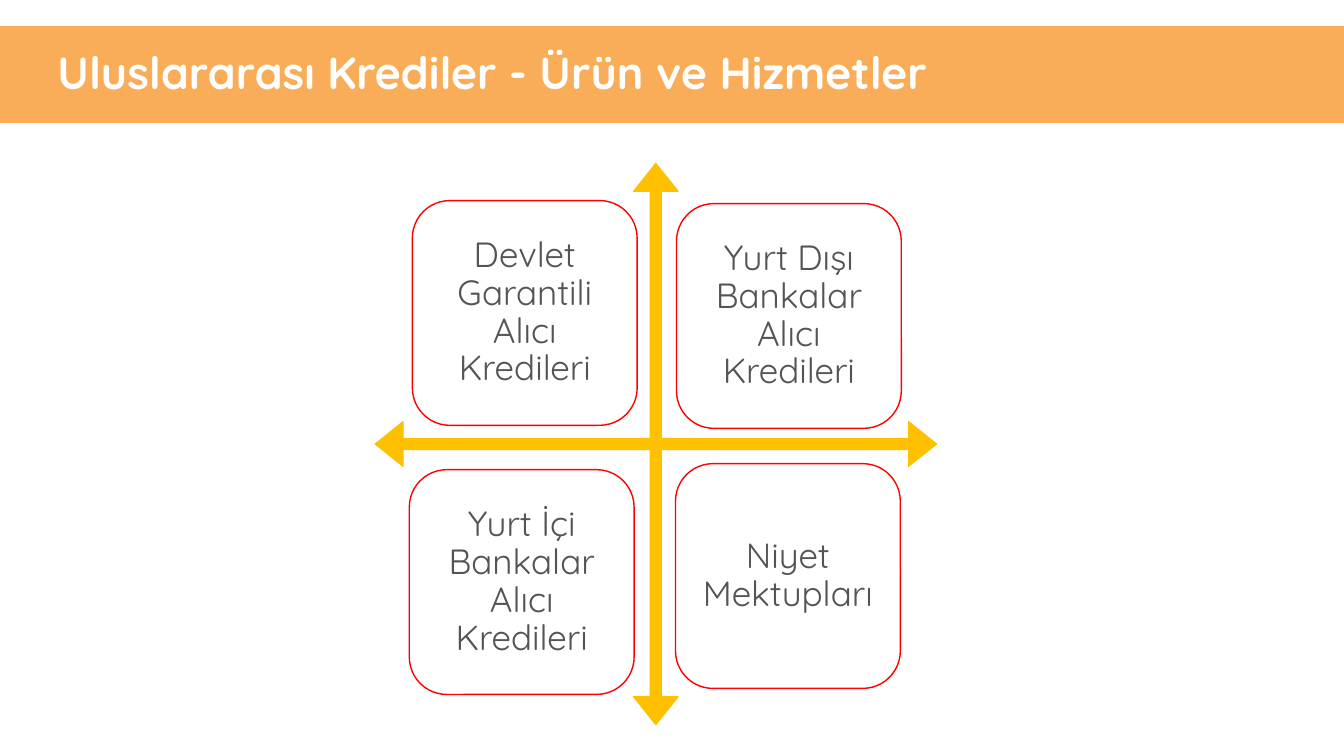
from pptx import Presentation
from pptx.dml.color import RGBColor
from pptx.enum import shapes, text
from pptx.oxml import xmlchemy as xc
from pptx.util import Inches, Pt

# Content
TITLE = "Uluslararası Krediler - Ürün ve Hizmetler"
CARDS = [  # label, left, top
    ("Devlet Garantili Alıcı Kredileri", 4.09, 1.99),
    ("Yurt İçi Bankalar Alıcı Kredileri", 4.06, 4.66),
    ("Yurt Dışı Bankalar Alıcı Kredileri", 6.71, 2.02),
    ("Niyet Mektupları", 6.7, 4.6),
]
SIDE = 2.23
CROSS = (3.72, 1.62, 5.57, 5.57)
BAND = (0, 0.26, 13.33, 0.96)

FONT = "Quicksand"
ORANGE = RGBColor(0xF9, 0x86, 0x07)
GOLD = RGBColor(0xFF, 0xC0, 0x00)
RED = RGBColor(0xFF, 0x00, 0x00)
WHITE = RGBColor(0xFF, 0xFF, 0xFF)
GREY = RGBColor(0x54, 0x54, 0x54)


def write(shape, words, size, color, align, bold=False, inset=0.1):
    frame = shape.text_frame
    frame.word_wrap = True
    frame.auto_size = text.MSO_AUTO_SIZE.NONE
    frame.vertical_anchor = text.MSO_ANCHOR.MIDDLE
    frame.margin_left = Inches(inset)
    frame.margin_right = frame.margin_top = frame.margin_bottom = Inches(0.1)
    para = frame.paragraphs[0]
    para.alignment, para.line_spacing = align, 0.9
    run = para.add_run()
    run.text = words
    font = run.font
    font.name, font.size, font.bold = FONT, Pt(size), bold
    font.color.rgb = color


def draw(slide, kind, box, fill, line, width):
    shape = slide.shapes.add_shape(kind, *map(Inches, box))
    shape.shadow.inherit = False
    shape.fill.solid()
    shape.fill.fore_color.rgb = fill
    shape.line.color.rgb = line
    shape.line.width = Pt(width)
    return shape


def main():
    deck = Presentation()
    deck.slide_width, deck.slide_height = Inches(13.33), Inches(7.5)
    slide = deck.slides.add_slide(deck.slide_layouts[5])

    # Title band, 67 % opaque
    band = slide.shapes.title
    band.left, band.top, band.width, band.height = map(Inches, BAND)
    band.fill.solid()
    band.fill.fore_color.rgb = ORANGE
    tint = band.fill._xPr.find(".//" + xc.qn("a:srgbClr"))
    alpha = xc.OxmlElement("a:alpha")
    alpha.set("val", "67000")
    tint.append(alpha)
    write(band, TITLE, 32, WHITE, text.PP_ALIGN.LEFT, bold=True, inset=0.57)

    # Four-way arrow
    kind = shapes.MSO_SHAPE
    cross = draw(slide, kind.QUAD_ARROW, CROSS, GOLD, GOLD, 0.75)
    for i, part in enumerate((0.02, 0.04, 0.05)):
        cross.adjustments[i] = part

    # Product cards
    for label, left, top in CARDS:
        card = draw(slide, kind.ROUNDED_RECTANGLE, (left, top, SIDE, SIDE),
                    WHITE, RED, 1)
        write(card, label, 25, GREY, text.PP_ALIGN.CENTER)

    deck.save("out.pptx")


if __name__ == "__main__":
    main()
